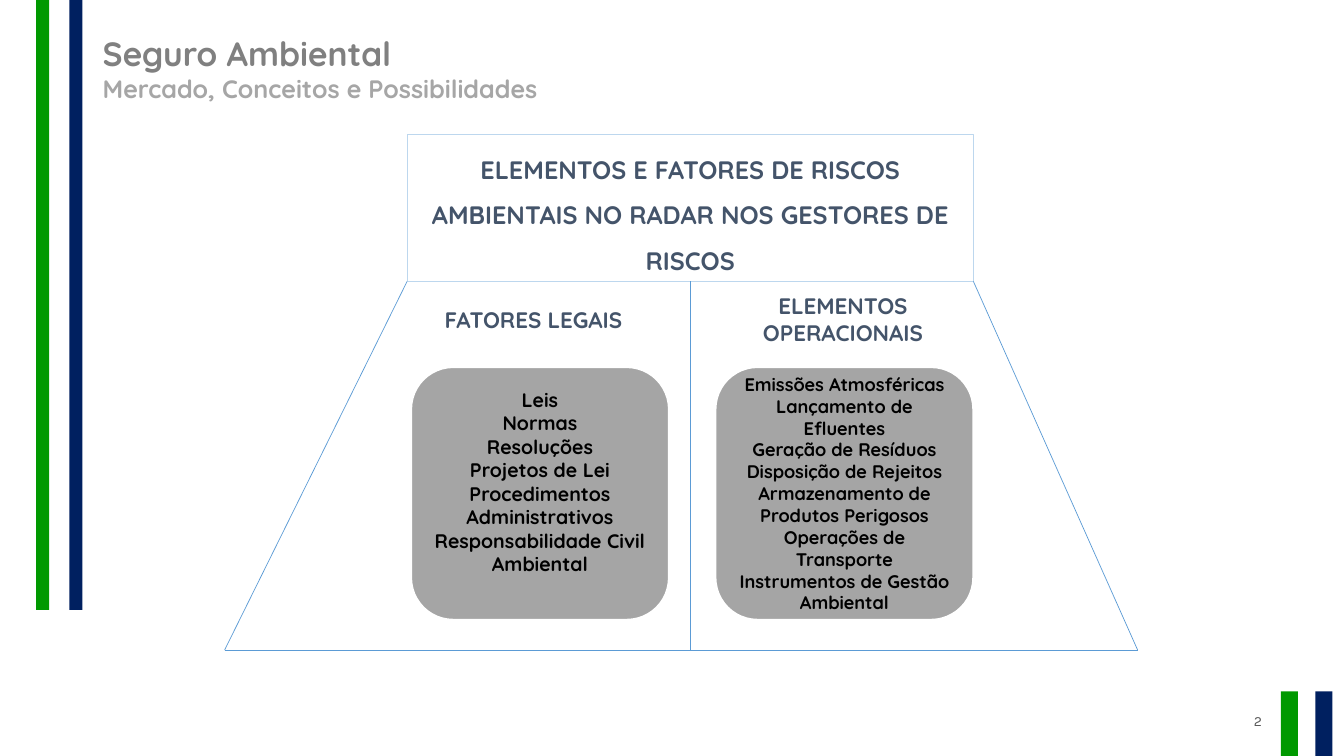
from lxml import etree
from pptx import Presentation
from pptx.dml.color import RGBColor
from pptx.enum import shapes as sh, text as tx
from pptx.oxml import ns
from pptx.util import Cm, Pt

HUES = {
    "green": "009900", "navy": "002060", "title": "808080", "sub": "A6A6A6",
    "slate": "44546A", "pale": "BDD7EE", "blue": "5B9BD5", "gray": "A5A5A5",
    "white": "FFFFFF", "black": "000000", "page": "595959",
}
LEGAL = ["Leis", "Normas", "Resoluções", "Projetos de Lei",
         "Procedimentos Administrativos", "Responsabilidade Civil Ambiental"]
OPERATIONS = ["Emissões Atmosféricas", "Lançamento de Efluentes",
              "Geração de Resíduos", "Disposição de Rejeitos",
              "Armazenamento de Produtos Perigosos", "Operações de Transporte",
              "Instrumentos de Gestão Ambiental"]


def hue(name):
    return RGBColor.from_string(HUES[name])


def write(shape, lines, size, color, align=tx.PP_ALIGN.CENTER,
          anchor=tx.MSO_ANCHOR.TOP, face="Quicksand", bold=True):
    frame = shape.text_frame
    frame.text = "\n".join(lines)
    frame.word_wrap = True
    frame.vertical_anchor = anchor
    for para in frame.paragraphs:
        para.alignment = align
        for run in para.runs:
            font = run.font
            font.name, font.size, font.bold = face, Pt(size), bold
            font.color.rgb = hue(color)
    return frame


def label(slide, box, *args, **style):
    area = slide.shapes.add_textbox(*map(Cm, box))
    return write(area, *args, **style)


def block(slide, box, fill=None, line=None, width=0.75,
          kind=sh.MSO_SHAPE.RECTANGLE):
    shape = slide.shapes.add_shape(kind, *map(Cm, box))
    shape.shadow.inherit = False
    if fill:
        shape.fill.solid()
        shape.fill.fore_color.rgb = hue(fill)
    else:
        shape.fill.background()
    if line:
        shape.line.color.rgb = hue(line)
        shape.line.width = Pt(width)
    else:
        shape.line.fill.background()
    return shape


def rule(slide, start, end):
    line = slide.shapes.add_connector(
        sh.MSO_CONNECTOR.STRAIGHT, *map(Cm, start + end))
    line.line.color.rgb = hue("blue")
    line.line.width = Pt(0.5)
    etree.SubElement(line._element.spPr, ns.qn("a:effectLst"))


def stripes(slide, left, top, width, height, bar):
    """Green bar at the left edge of the box, navy bar at the right edge."""
    block(slide, (left, top, bar, height), "green")
    block(slide, (left + width - bar, top, bar, height), "navy")


def header(slide, box):
    lines = ["Seguro Ambiental", "Mercado, Conceitos e Possibilidades"]
    frame = label(slide, box, lines, 24, "title", align=tx.PP_ALIGN.LEFT)
    font = frame.paragraphs[1].runs[0].font
    font.size = Pt(18)
    font.color.rgb = hue("sub")


def footer(slide, box):
    label(slide, box, ["2"], 10, "page", align=tx.PP_ALIGN.RIGHT,
          anchor=tx.MSO_ANCHOR.MIDDLE, face="Karla", bold=False)


def card(slide, box, lines, size, below=0.13):
    shape = block(slide, box, "gray", "white", 1.5,
                  sh.MSO_SHAPE.ROUNDED_RECTANGLE)
    frame = write(shape, lines, size, "black", anchor=tx.MSO_ANCHOR.MIDDLE)
    frame.margin_bottom = Cm(below)


def diagram(slide, left, top, width, height):
    """Heading box on top of a trapezoid split into two columns."""
    roof, inset = 3.71, 4.6
    near, far = left + inset, left + width - 4.14
    neck, base, mid = top + roof, top + height, (near + far) / 2

    head = block(slide, (near, top, far - near, roof), line="pale")
    frame = write(head, ["ELEMENTOS E FATORES DE RISCOS AMBIENTAIS "
                         "NO RADAR NOS GESTORES DE RISCOS"], 18, "slate")
    frame.paragraphs[0].line_spacing = 1.5

    foot = (left, base), (left + width, base)
    rule(slide, (mid, neck), (mid, base))
    rule(slide, (far, neck), foot[1])
    rule(slide, (near, neck), foot[0])
    rule(slide, *foot)

    span = 7.9
    label(slide, (mid - span, neck + 0.5, span, 0.94),
          ["FATORES LEGAIS"], 16, "slate")
    label(slide, (mid - 0.1, neck + 0.15, span, 1.63),
          ["ELEMENTOS OPERACIONAIS"], 16, "slate")

    wide, tall, drop = 6.5, 6.37, neck + 2.16
    card(slide, (near + 0.1, drop, wide, tall), LEGAL, 14, below=0.72)
    card(slide, (far - wide, drop, wide, tall), OPERATIONS, 13)


def main():
    deck = Presentation()
    deck.slide_width, deck.slide_height = Cm(33.87), Cm(19.05)
    slide = deck.slides.add_slide(deck.slide_layouts[6])
    stripes(slide, 0.91, -0.02, 1.17, 15.39, bar=0.33)
    stripes(slide, 32.28, 17.42, 1.3, 1.67, bar=0.43)
    footer(slide, (24.43, 17.65, 7.62, 1.02))
    header(slide, (2.34, 0.71, 24.87, 2.06))
    diagram(slide, 5.66, 3.38, 23.01, 13)
    deck.save("out.pptx")


if __name__ == "__main__":
    main()
